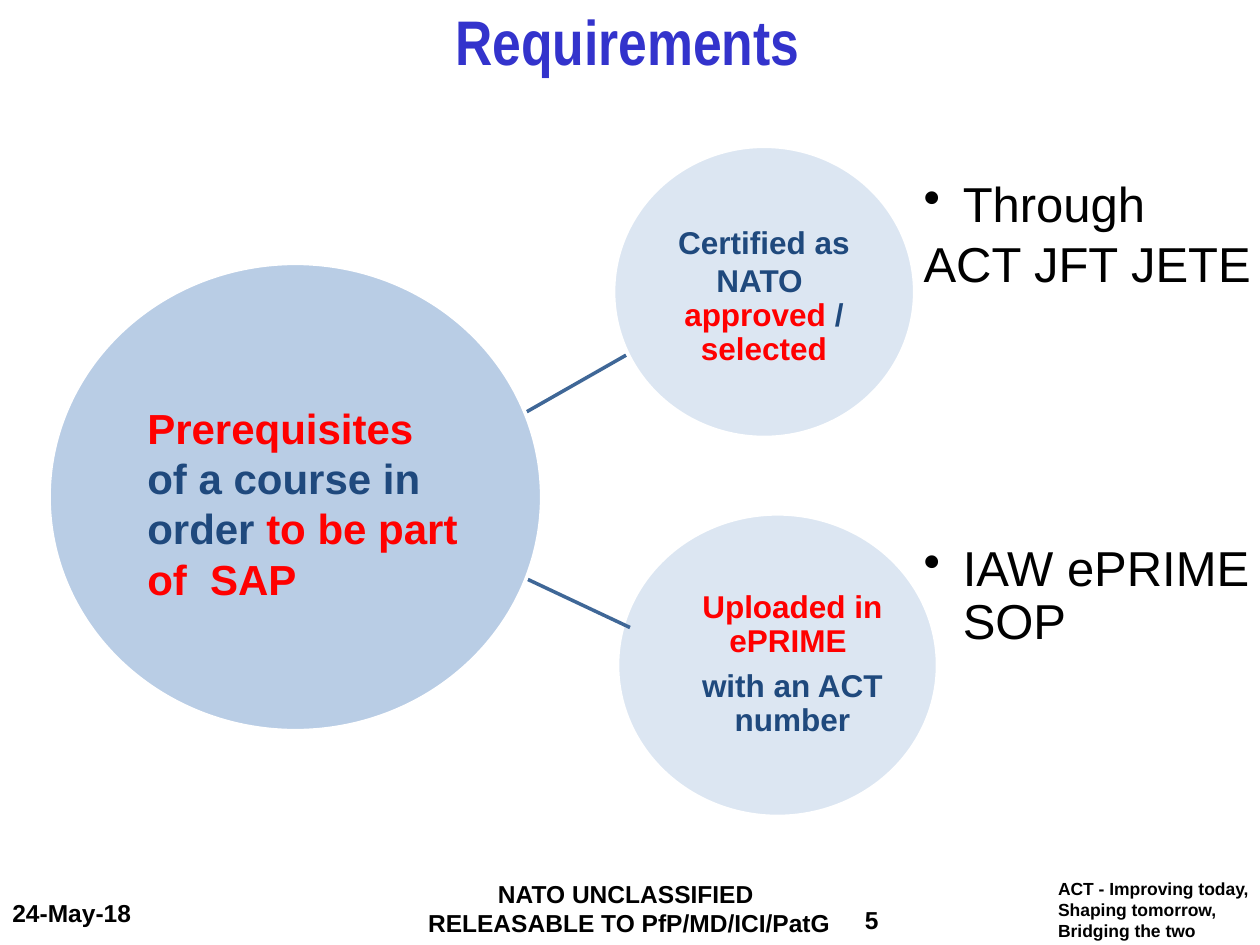
from lxml import etree
from pptx import Presentation
from pptx.dml.color import RGBColor
from pptx.enum.shapes import MSO_CONNECTOR, MSO_SHAPE
from pptx.enum.text import MSO_ANCHOR, MSO_AUTO_SIZE, PP_ALIGN
from pptx.oxml.ns import qn
from pptx.util import Cm, Pt

ELLIPSE = MSO_SHAPE.OVAL
STRAIGHT = MSO_CONNECTOR.STRAIGHT
LEFT, CENTER = PP_ALIGN.LEFT, PP_ALIGN.CENTER
TOP, MIDDLE = MSO_ANCHOR.TOP, MSO_ANCHOR.MIDDLE
NO_AUTOFIT = MSO_AUTO_SIZE.NONE

THEME = {
    "font": "Arial", "title_font": "Arial Narrow",
    "black": "000000", "white": "FFFFFF", "title": "3333CC",
    "red": "FF0000", "navy": "1F497D", "line": "3F6797",
    "main": "B9CDE5", "branch": "DCE6F2",
    "title_size": 36, "bullet_size": 28, "main_size": 24,
    "branch_size": 18, "footer_size": 14, "motto_size": 10,
}

# Content: each paragraph is a list of (text, colour) runs; boxes are
# left, top, width, height in centimetres
TITLE = ([[("Requirements", "title")]], (8.92, -0.08, 7.82, 1.8))

PREREQUISITES = {
    "circle": (0.99, 5.31, 9.93, 9.42),
    "box": (2.72, 7.98, 6.78, 4.37),
    "text": [[("Prerequisites", "red"), (" of a course in order ", "navy"),
              ("to be part of  SAP", "red")]],
}

BRANCHES = [
    {
        "circle": (12.37, 2.95, 6.07, 5.87),
        "box": (12.95, 3.84, 4.9, 4.22),
        "text": [[("Certified as NATO ", "navy")],
                 [("approved", "red"), (" / ", "navy"), ("selected", "red")]],
        "tight": (False, True),
        "link": (10.62, 8.3, 12.62, 7.16),
        "notes": [[("Through", "black")], [("ACT JFT JETE", "black")]],
        "notes_top": 2.21,
    },
    {
        "circle": (12.45, 10.36, 6.45, 6.1),
        "box": (13.69, 11.25, 4.57, 4.32),
        "text": [[("Uploaded in ePRIME ", "red")],
                 [("with an ACT number", "navy")]],
        "tight": (True, True),
        "link": (10.64, 11.68, 12.7, 12.65),
        "notes": [[("IAW ePRIME SOP", "black")]],
        "notes_top": 9.47,
    },
]
NOTES_LEFT, NOTES_WIDTH, NOTES_HEIGHT = 18.62, 7.67, 5.13
NOTES_INDENT = 0.79

# Footer entries: lines, box, size, alignment, anchor
FOOTERS = [
    (["ACT - Improving today,", "Shaping tomorrow,", "Bridging the two"],
     (21.08, 17.58, 4.42, 1.32), "motto_size", LEFT, TOP),
    (["NATO UNCLASSIFIED ", "RELEASABLE TO PfP/MD/ICI/PatG"],
     (6.55, 17.58, 12.27, 1.47), "footer_size", CENTER, MIDDLE),
    (["5"], (16.71, 18.03, 1.73, 1.02), "footer_size", CENTER, MIDDLE),
    (["24-May-18"], (0, 17.73, 6.15, 1.32), "footer_size", LEFT, MIDDLE),
]


def color(name):
    return RGBColor.from_string(THEME[name])


def lengths(values):
    return [Cm(value) for value in values]


def add_bullet(paragraph):
    properties = paragraph._p.get_or_add_pPr()
    properties.set("marL", str(Cm(NOTES_INDENT)))
    properties.set("indent", str(-Cm(NOTES_INDENT)))
    etree.SubElement(properties, qn("a:buChar")).set("char", "•")


def write_text(slide, paragraphs, box, size, shape=None, font="font", bold=True,
               align=LEFT, anchor=TOP, insets=None, tight=(), after=0,
               bullet=False):
    """Fill a placeholder, or a new text box, with formatted runs."""
    shape = shape or slide.shapes.add_textbox(*lengths(box))
    shape.left, shape.top, shape.width, shape.height = lengths(box)
    frame = shape.text_frame
    frame.word_wrap = True
    frame.auto_size = NO_AUTOFIT
    frame.vertical_anchor = anchor
    if insets is not None:
        frame.margin_left = frame.margin_right = Cm(insets)
        frame.margin_top = frame.margin_bottom = Cm(insets)
    for index, runs in enumerate(paragraphs):
        paragraph = frame.paragraphs[0] if index == 0 else frame.add_paragraph()
        paragraph.alignment = align
        if bullet and index == 0:
            add_bullet(paragraph)
        if tight and tight[index]:
            paragraph.line_spacing = 0.9
            paragraph.space_after = Pt(round(THEME[size] * after, 1))
        for text, color_name in runs:
            run = paragraph.add_run()
            run.text = text
            run.font.name = THEME[font]
            run.font.size = Pt(THEME[size])
            run.font.bold = bold
            run.font.color.rgb = color(color_name)


def add_circle(slide, box, fill):
    circle = slide.shapes.add_shape(ELLIPSE, *lengths(box))
    circle.shadow.inherit = False
    circle.fill.solid()
    circle.fill.fore_color.rgb = color(fill)
    circle.line.color.rgb = color("white")
    circle.line.width = Pt(2)


def add_link(slide, ends):
    link = slide.shapes.add_connector(STRAIGHT, *lengths(ends))
    link.line.color.rgb = color("line")
    link.line.width = Pt(2)
    etree.SubElement(link._element.spPr, qn("a:effectLst"))


def main():
    presentation = Presentation()
    presentation.slide_width, presentation.slide_height = Cm(25.4), Cm(19.05)
    slide = presentation.slides.add_slide(presentation.slide_layouts[5])

    # Title
    text, box = TITLE
    write_text(slide, text, box, "title_size", shape=slide.shapes.title,
               font="title_font")

    # Branch circles and their links
    for branch in BRANCHES:
        add_circle(slide, branch["circle"], "branch")
        write_text(slide, branch["text"], branch["box"], "branch_size",
                   align=CENTER, anchor=MIDDLE, insets=0.03,
                   tight=branch["tight"], after=0.35)
        add_link(slide, branch["link"])

    # Main circle
    add_circle(slide, PREREQUISITES["circle"], "main")
    write_text(slide, PREREQUISITES["text"], PREREQUISITES["box"], "main_size")

    # Bulleted notes beside the branches
    for branch in BRANCHES:
        notes = branch["notes"]
        box = (NOTES_LEFT, branch["notes_top"], NOTES_WIDTH, NOTES_HEIGHT)
        write_text(slide, notes, box, "bullet_size", bold=False, anchor=MIDDLE,
                   insets=0, tight=[True] * len(notes), after=0.15, bullet=True)

    # Footer
    for lines, box, size, align, anchor in FOOTERS:
        write_text(slide, [[(line, "black")] for line in lines], box, size,
                   align=align, anchor=anchor)

    presentation.save("out.pptx")


if __name__ == "__main__":
    main()
